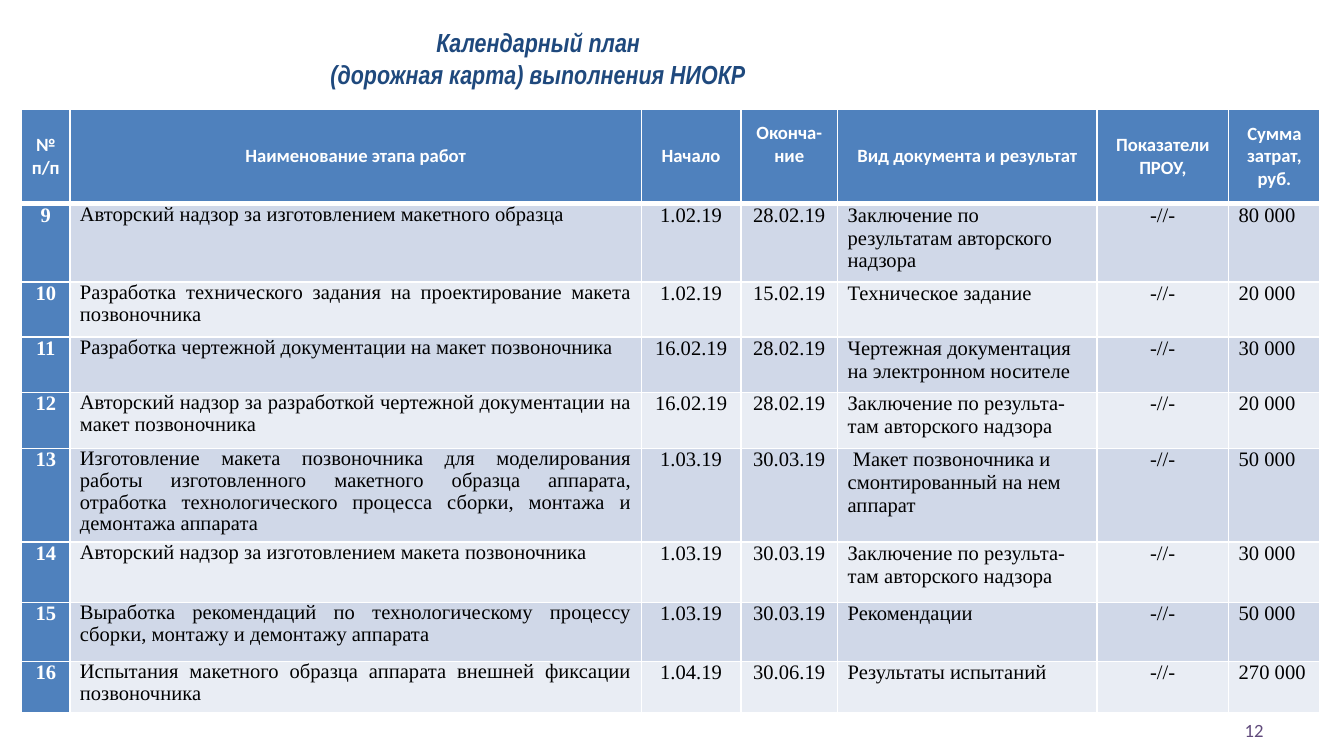
from dataclasses import dataclass

from lxml import etree
from pptx import Presentation
from pptx.dml.color import RGBColor
from pptx.enum.text import MSO_ANCHOR, PP_ALIGN
from pptx.oxml.ns import qn
from pptx.util import Cm, Pt

LEFT, CENTER, RIGHT, JUSTIFY = PP_ALIGN.LEFT, PP_ALIGN.CENTER, PP_ALIGN.RIGHT, PP_ALIGN.JUSTIFY
TOP, MIDDLE = MSO_ANCHOR.TOP, MSO_ANCHOR.MIDDLE


@dataclass(frozen=True)
class Style:
    """Font, size, colour and weight of a run."""
    font: str
    size: float
    color: str
    bold: bool = False
    italic: bool = False


@dataclass(frozen=True)
class Theme:
    """Colours and text styles of the slide."""
    accent: str = "4F81BD"
    bands: tuple = ("D0D8E8", "E9EDF4")
    rule: str = "FFFFFF"
    title: Style = Style("Arial Narrow", 14, "1F497D", True, True)
    head: Style = Style("Calibri", 10, "FFFFFF", True)
    number: Style = Style("Times New Roman", 11, "FFFFFF", True)
    body: Style = Style("Times New Roman", 11, "000000")
    page: Style = Style("Calibri", 10, "604A7B")


THEME = Theme()
COLUMNS = (0.91, 10.8, 1.88, 1.83, 4.9, 2.49, 1.73)
ALIGNS = (CENTER, JUSTIFY, CENTER, CENTER, LEFT, CENTER, LEFT)
ROWS = (1.79, 1.48, 1.04, 1.04, 1.06, 1.4, 1.14, 1.11, 0.97)
FIRST_STAGE = 9
SAME = "-//-"
HEADERS = ("№ п/п", "Наименование этапа работ", "Начало", "Оконча-ние",
           "Вид документа и результат", "Показатели ПРОУ,", "Сумма затрат, руб.")
RAISED_HEADER = "Оконча-ние"
REVIEW = "Заключение по результа-там авторского надзора"
STAGES = (
    ("Авторский надзор за изготовлением макетного образца",
     "1.02.19", "28.02.19", "Заключение по результатам авторского надзора", "80 000"),
    ("Разработка технического задания на проектирование макета позвоночника",
     "1.02.19", "15.02.19", "Техническое задание", "20 000"),
    ("Разработка чертежной документации на макет позвоночника",
     "16.02.19", "28.02.19", "Чертежная документация на электронном носителе", "30 000"),
    ("Авторский надзор за разработкой чертежной документации на макет позвоночника",
     "16.02.19", "28.02.19", REVIEW, "20 000"),
    ("Изготовление макета позвоночника для моделирования работы изготовленного "
     "макетного образца аппарата, отработка технологического процесса сборки, "
     "монтажа и демонтажа аппарата",
     "1.03.19", "30.03.19", " Макет позвоночника и смонтированный на нем аппарат", "50 000"),
    ("Авторский надзор за изготовлением макета позвоночника",
     "1.03.19", "30.03.19", REVIEW, "30 000"),
    ("Выработка рекомендаций по технологическому процессу сборки, монтажу "
     "и демонтажу аппарата",
     "1.03.19", "30.03.19", "Рекомендации", "50 000"),
    ("Испытания макетного образца аппарата внешней фиксации позвоночника",
     "1.04.19", "30.06.19", "Результаты испытаний", "270 000"),
)


def add_run(p, text, style):
    """Add one styled run to a paragraph."""
    r = p.add_run()
    r.text = text
    r.font.name, r.font.size = style.font, Pt(style.size)
    r.font.bold, r.font.italic = style.bold, style.italic
    r.font.color.rgb = RGBColor.from_string(style.color)


def add_text(s, box, lines, style, align):
    """Place a vertically centred text box, its lines parted by line breaks."""
    tf = s.shapes.add_textbox(*map(Cm, box)).text_frame
    tf.word_wrap = True
    tf.vertical_anchor = MIDDLE
    p = tf.paragraphs[0]
    p.alignment = align
    for i, line in enumerate(lines):
        if i:
            p.add_line_break()
        add_run(p, line, style)


def set_borders(cell, bottom):
    """Draw the four borders of a cell, the bottom one at its own width."""
    tcPr = cell._tc.get_or_add_tcPr()
    for side, width in (("L", 1), ("R", 1), ("T", 1), ("B", bottom)):
        ln = etree.SubElement(tcPr, qn(f"a:ln{side}"), w=str(Pt(width)))
        fill = etree.SubElement(ln, qn("a:solidFill"))
        etree.SubElement(fill, qn("a:srgbClr"), val=THEME.rule)


def fill_cell(cell, text, style, align, color, anchor=TOP, bottom=1):
    """Write and format one table cell."""
    set_borders(cell, bottom)
    cell.fill.solid()
    cell.fill.fore_color.rgb = RGBColor.from_string(color)
    cell.margin_left = cell.margin_right = Cm(0.19)
    cell.margin_top = cell.margin_bottom = 0
    cell.vertical_anchor = anchor
    p = cell.text_frame.paragraphs[0]
    p.alignment = align
    if align == JUSTIFY:
        p.line_spacing = 0.95
    add_run(p, text, style)


def add_schedule(s, left, top):
    """Place the table of work stages at the given corner."""
    box = map(Cm, (left, top, sum(COLUMNS), sum(ROWS)))
    table = s.shapes.add_table(len(ROWS), len(COLUMNS), *box).table
    table.horz_banding = False
    for column, width in zip(table.columns, COLUMNS):
        column.width = Cm(width)
    for row, height in zip(table.rows, ROWS):
        row.height = Cm(height)
    for j, text in enumerate(HEADERS):
        cell = table.cell(0, j)
        fill_cell(cell, text, THEME.head, CENTER, THEME.accent, MIDDLE, 3)
        if text == RAISED_HEADER:
            cell.margin_bottom = Cm(0.44)
    for i, (*details, cost) in enumerate(STAGES):
        values = (str(FIRST_STAGE + i), *details, SAME, cost)
        for j, (text, align) in enumerate(zip(values, ALIGNS)):
            style = THEME.body if j else THEME.number
            color = THEME.bands[i % 2] if j else THEME.accent
            fill_cell(table.cell(i + 1, j), text, style, align, color)


def main():
    """Build and save the slide."""
    prs = Presentation()
    prs.slide_width, prs.slide_height = Cm(25.4), Cm(14.28)
    s = prs.slides.add_slide(prs.slide_layouts[6])
    add_text(s, (18.21, 13.41, 5.92, 0.76), ("12",), THEME.page, RIGHT)
    add_text(s, (-0.64, 0.53, 21.74, 1.14),
             ("Календарный план ", "(дорожная карта) выполнения НИОКР "), THEME.title, CENTER)
    add_schedule(s, 0.41, 2.06)
    prs.save("out.pptx")


if __name__ == "__main__":
    main()
